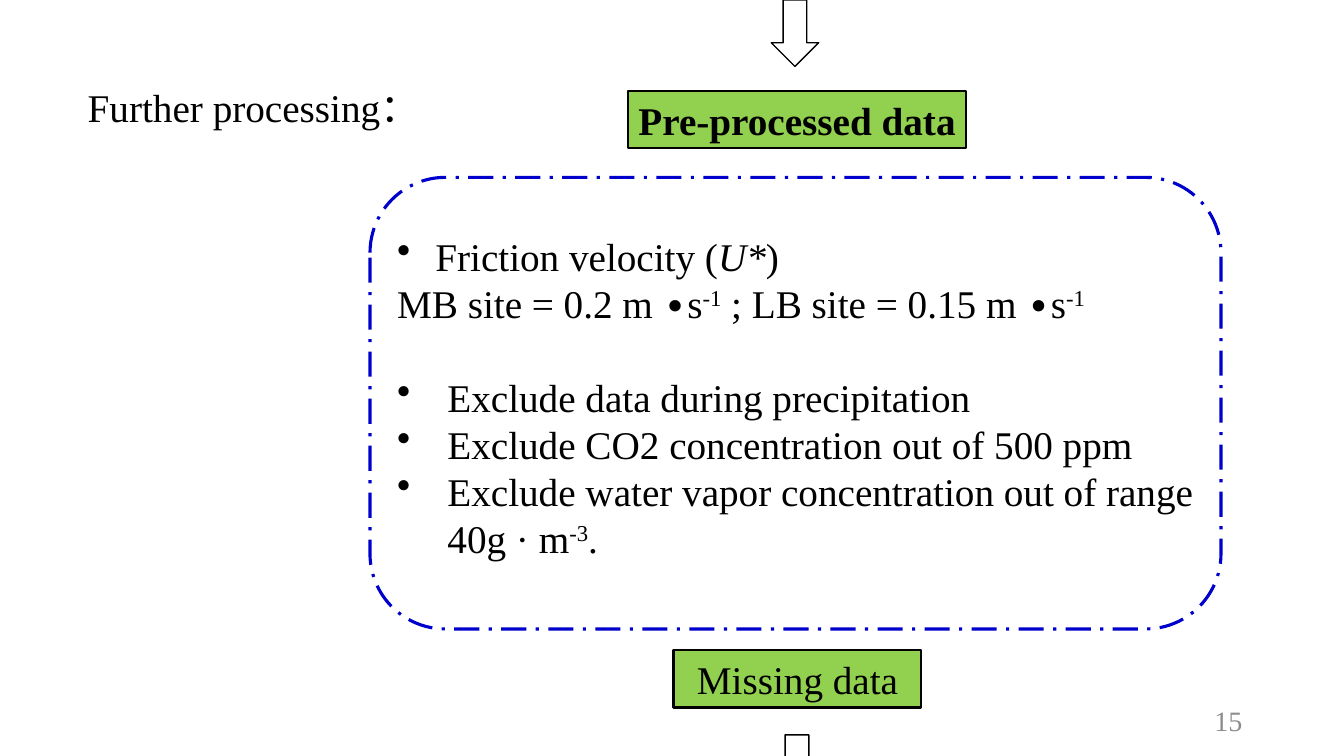
from lxml.etree import SubElement
from pptx import Presentation
from pptx.dml.color import RGBColor
from pptx.enum.dml import MSO_LINE
from pptx.enum.shapes import MSO_SHAPE
from pptx.enum.text import MSO_ANCHOR, PP_ALIGN
from pptx.oxml.ns import qn
from pptx.util import Pt

PX = 9144  # 100 px to the inch
FONT = "Times New Roman"
COLORS = {"black": "000000", "white": "FFFFFF", "green": "92D050",
          "blue": "0000CC", "gray": "8C8C8C"}

TITLE = ("Further processing：", (82, 78, 412, 57))
PAGE = ("15", (942, 695, 300, 40))
STAGES = [  # text, box, bold
    ("Pre-processed data", (623, 90, 335, 57), True),
    ("Missing data", (668, 645, 246, 57), False),
]
ARROWS = [(765, 0, 47, 66), (767, 729, 47, 66)]
FILTER_BOX = (367, 176, 844, 448)
LINE_PITCH = 33.6
FILTERS = [  # bullet indent in px, space before in pt, runs of (text, style)
    (38, 0, [("Friction velocity (", ""), ("U*", "italic"), (")", "")]),
    (0, 0, [("MB site = 0.2 m ", ""), ("∙", "dot"), ("s", ""), ("-1", "super"),
            (" ; LB site = 0.15 m ", ""), ("∙", "dot"), ("s", ""),
            ("-1", "super")]),
    (50, LINE_PITCH, [("Exclude data during precipitation", "")]),
    (50, 0, [("Exclude CO2 concentration out of 500 ppm", "")]),
    (50, 0, [("Exclude water vapor concentration out of range 40g · m", ""),
             ("-3", "super"), (".", "")]),
]


def rgb(name):
    return RGBColor.from_string(COLORS[name])


def emu(box):
    return [v * PX for v in box]


def add_run(p, text, style="", size=28, color="black", bold=False):
    r = p.add_run()
    r.text = text
    r.font.name = "Calibri" if style == "dot" else FONT
    r.font.size = Pt(size)
    r.font.color.rgb = rgb(color)
    r.font.bold = bold
    r.font.italic = style == "italic"
    if style == "super":
        r._r.get_or_add_rPr().set("baseline", "30000")


def set_frame(sp, anchor, insets=(5, 5, 5, 5)):
    """Wrap the text, set anchor and insets, and return the text frame."""
    tf = sp.text_frame
    tf.word_wrap = True
    tf.vertical_anchor = anchor
    (tf.margin_left, tf.margin_top,
     tf.margin_right, tf.margin_bottom) = emu(insets)
    return tf


def add_box(s, kind, box, fill, line, width):
    sp = s.shapes.add_shape(kind, *emu(box))
    sp.shadow.inherit = False
    if fill:
        sp.fill.solid()
        sp.fill.fore_color.rgb = rgb(fill)
    else:
        sp.fill.background()
    sp.line.color.rgb = rgb(line)
    sp.line.width = Pt(width)
    return sp


def set_bullet(p, indent):
    pPr = p._p.get_or_add_pPr()
    pPr.set("marL", str(indent * PX))
    pPr.set("indent", str(-indent * PX))
    SubElement(pPr, qn("a:buChar")).set("char", "•")


def add_filters(s):
    sp = add_box(s, MSO_SHAPE.ROUNDED_RECTANGLE, FILTER_BOX, None, "blue", 2.25)
    sp.line.dash_style = MSO_LINE.LONG_DASH_DOT
    tf = set_frame(sp, MSO_ANCHOR.MIDDLE, (5, 5, 3, 18))
    for i, (indent, before, runs) in enumerate(FILTERS):
        p = tf.add_paragraph() if i else tf.paragraphs[0]
        p.alignment = PP_ALIGN.LEFT
        p.line_spacing = Pt(LINE_PITCH)
        p.space_before = Pt(before)
        if indent:
            set_bullet(p, indent)
        for text, style in runs:
            add_run(p, text, style)


def main():
    prs = Presentation()
    prs.slide_width, prs.slide_height = emu((1333, 750))
    s = prs.slides.add_slide(prs.slide_layouts[6])

    text, box = PAGE
    tf = set_frame(s.shapes.add_textbox(*emu(box)), MSO_ANCHOR.MIDDLE,
                   (10, 5, 10, 5))
    tf.paragraphs[0].alignment = PP_ALIGN.RIGHT
    add_run(tf.paragraphs[0], text, size=20, color="gray")

    text, box = TITLE
    tf = set_frame(s.shapes.add_textbox(*emu(box)), MSO_ANCHOR.TOP)
    add_run(tf.paragraphs[0], text)

    add_filters(s)
    for text, box, bold in STAGES:
        sp = add_box(s, MSO_SHAPE.RECTANGLE, box, "green", "black", 1.5)
        p = set_frame(sp, MSO_ANCHOR.MIDDLE).paragraphs[0]
        p.alignment = PP_ALIGN.CENTER
        add_run(p, text, bold=bold)
    for box in ARROWS:
        add_box(s, MSO_SHAPE.DOWN_ARROW, box, "white", "black", 1)

    prs.save("out.pptx")


if __name__ == "__main__":
    main()
